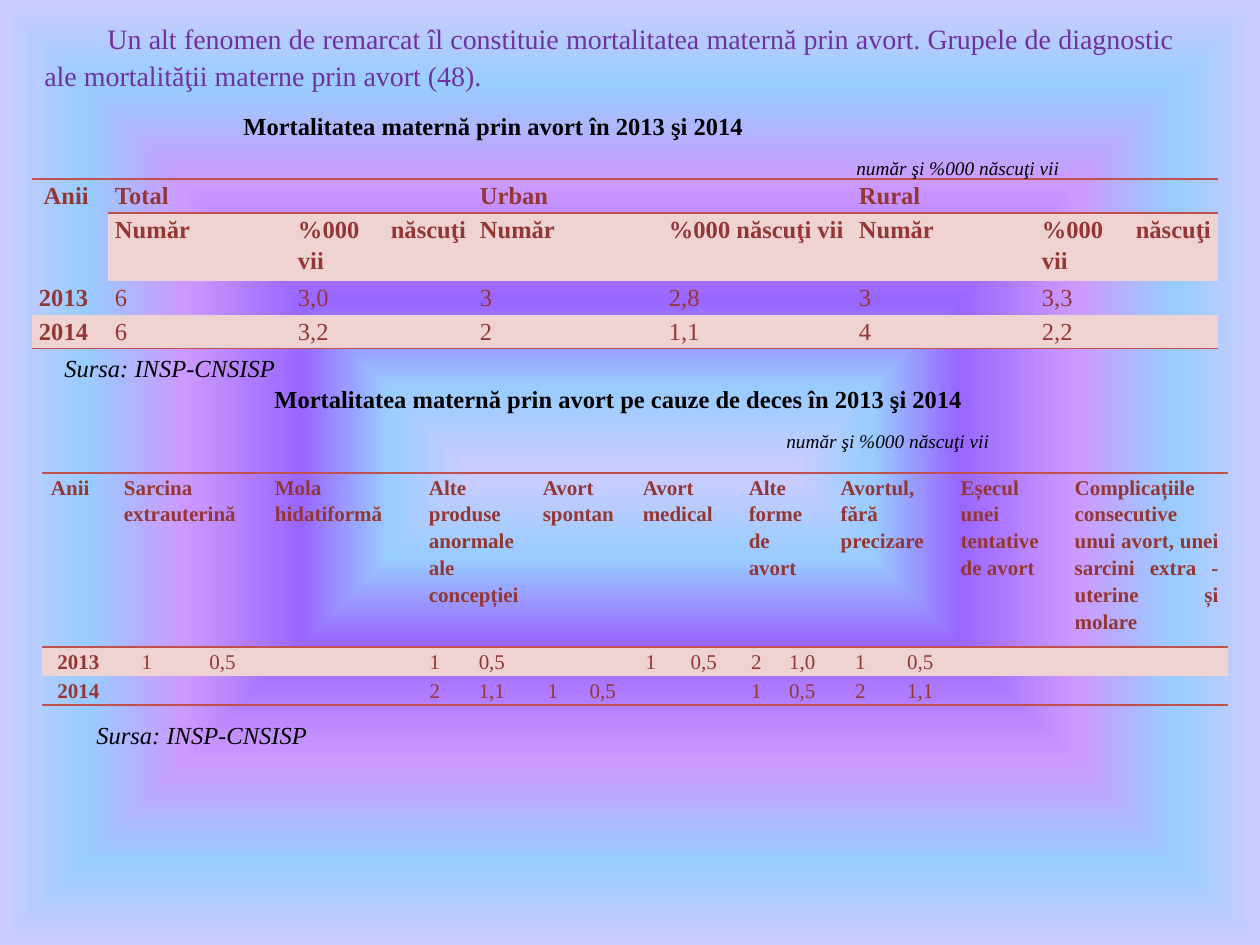
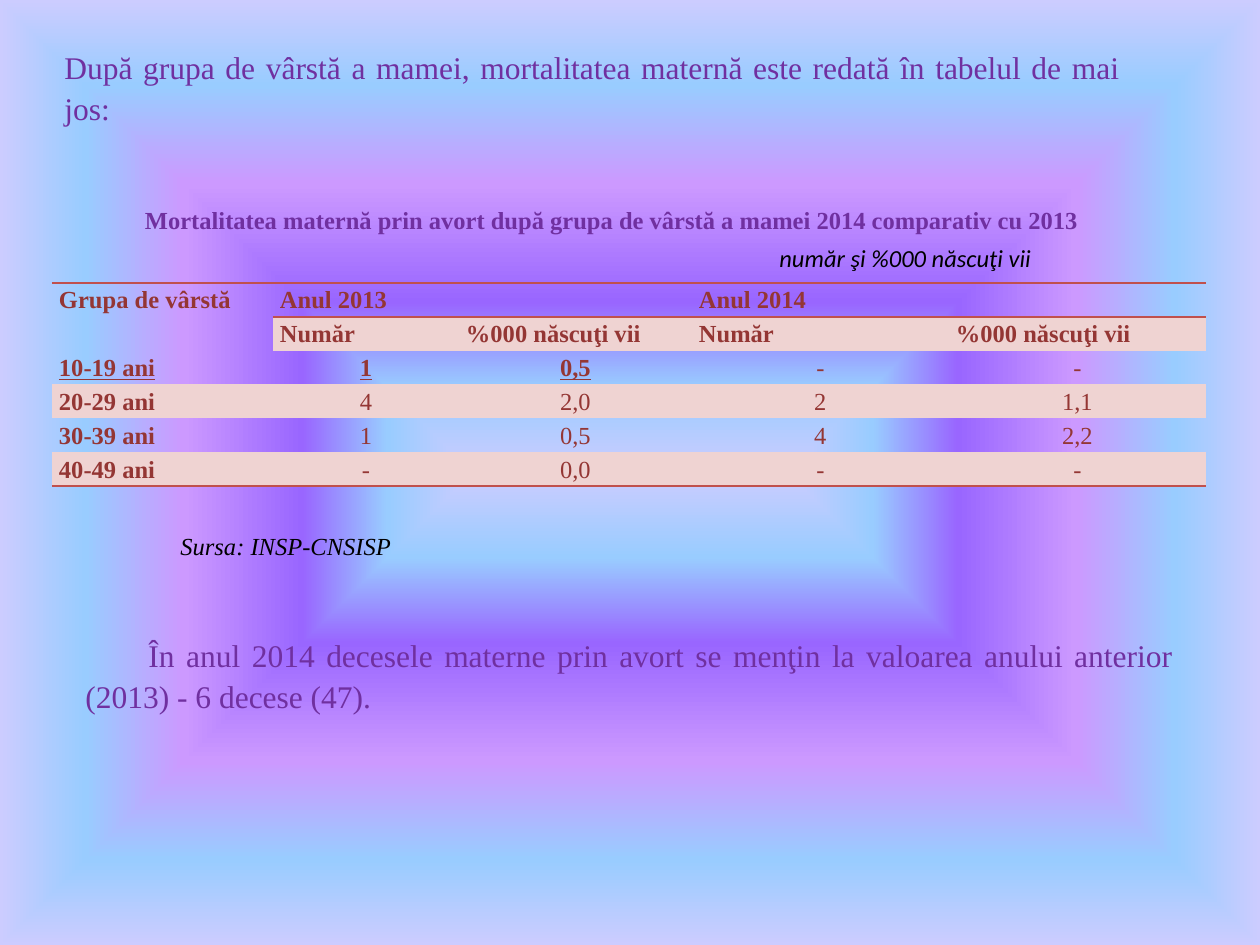
from dataclasses import dataclass

import pptx
import pptx.dml.color
import pptx.enum.text
import pptx.oxml
import pptx.oxml.ns
import pptx.slide
import pptx.table
import pptx.text.text
import pptx.util
from lxml import etree

SCALE = 914400 / 126  # EMU in one px
WIDE, HIGH = 1260, 945
COLORS = {
    "title": "7030A0",
    "ink": "000000",
    "table": "943634",
    "band": "EFD3D2",
    "line": "C0504D",
}
GLOW = [(0, "CCCCFF"), (18, "99CCFF"), (36, "9966FF"),
        (61, "CC99FF"), (82, "99CCFF"), (100, "CCCCFF")]
SERIF, SANS = "Times New Roman", "Calibri"
PLAIN_TABLE = "{2D5ABB26-0587-4C30-8999-92F81FD0307C}"
ALIGN = pptx.enum.text.PP_ALIGN
qn = pptx.oxml.ns.qn

LEAD = {"size": 18, "color": "title"}
HEAD = {"size": 14, "color": "ink", "bold": True}
NOTE = {"size": 11, "color": "ink", "italic": True}
SOURCE = {"size": 14, "color": "ink", "italic": True}


@dataclass
class Para:
    text: str
    style: dict
    align: ALIGN = ALIGN.LEFT
    left: int = 0
    first: int = 0
    before: int = 0
    lines: float = 1.0


@dataclass
class Box:
    x: int
    y: int
    w: int
    h: int
    paras: list[Para]
    top: int = 6


@dataclass
class Grid:
    """Table whose first row holds one label, then labels two columns wide."""
    x: int
    y: int
    cols: list[int]
    rows: list[int]
    labels: list[str]
    body: list[str]
    heads: int
    center: int
    size: int
    pad: int
    marked: tuple = ()


def px(size: float) -> int:
    return round(size * SCALE)


def style_font(font: pptx.text.text.Font, style: dict) -> None:
    looks = {"name": SERIF, **style}
    looks["size"] = pptx.util.Pt(looks["size"])
    color = looks.pop("color")
    for name, value in looks.items():
        setattr(font, name, value)
    font.color.rgb = pptx.dml.color.RGBColor.from_string(COLORS[color])


def fill_para(target: pptx.text.text._Paragraph, para: Para) -> None:
    target.alignment = para.align
    target.line_spacing = para.lines
    target.space_before = pptx.util.Pt(para.before)
    props = target._p.get_or_add_pPr()
    props.set("marL", str(px(para.left)))
    props.set("indent", str(px(para.first)))
    if para.text:
        run = target.add_run()
        run.text = para.text
        style_font(run.font, para.style)
    else:
        etree.SubElement(target._p, qn("a:endParaRPr"),
                         sz=str(para.style["size"] * 100))


def draw_box(slide: pptx.slide.Slide, box: Box) -> None:
    shape = slide.shapes.add_textbox(px(box.x), px(box.y), px(box.w), px(box.h))
    frame = shape.text_frame
    frame.word_wrap = True
    frame.margin_top = px(box.top)
    for index, para in enumerate(box.paras):
        target = frame.add_paragraph() if index else frame.paragraphs[0]
        fill_para(target, para)


def add_rule(cell: pptx.table._Cell, side: str) -> None:
    props = cell._tc.get_or_add_tcPr()
    line = etree.SubElement(props, qn(f"a:ln{side}"), w="12700")
    fill = etree.SubElement(line, qn("a:solidFill"))
    etree.SubElement(fill, qn("a:srgbClr"), val=COLORS["line"])


def merge_heads(table: pptx.table.Table, grid: Grid) -> None:
    table.cell(0, 0).merge(table.cell(grid.heads - 1, 0))
    for col in range(1, len(grid.cols), 2):
        table.cell(0, col).merge(table.cell(0, col + 1))


def cell_texts(grid: Grid) -> list[list[str]]:
    top = [grid.labels[0]]
    for label in grid.labels[1:]:
        top += [label, ""]
    return [top] + [line.split("|") for line in grid.body]


def draw_cell(cell: pptx.table._Cell, grid: Grid, row: int, col: int,
              text: str) -> None:
    tall = col == 0 and row < grid.heads and grid.heads > 1
    for name, size in {"left": grid.pad, "right": grid.pad,
                       "top": 0, "bottom": 0}.items():
        setattr(cell, f"margin_{name}", px(size))
    if row == 0:
        add_rule(cell, "T")
    if row == len(grid.rows) - 1 or (row == 0 and not tall):
        add_rule(cell, "B")
    if row % 2 and not tall:
        cell.fill.solid()
        cell.fill.fore_color.rgb = pptx.dml.color.RGBColor.from_string(
            COLORS["band"])
    else:
        cell.fill.background()
    mark = (row, col) in grid.marked
    style = {"size": grid.size, "color": "table", "underline": mark,
             "bold": mark or row < grid.heads or col == 0}
    mid = row >= grid.heads and col >= grid.center
    align = ALIGN.CENTER if mid else ALIGN.JUSTIFY
    fill_para(cell.text_frame.paragraphs[0],
              Para(text, style, align, lines=1.15))


def draw_grid(slide: pptx.slide.Slide, grid: Grid) -> None:
    frame = slide.shapes.add_table(
        len(grid.rows), len(grid.cols), px(grid.x), px(grid.y),
        px(sum(grid.cols)), px(sum(grid.rows)))
    table = frame.table
    table.first_row = table.horz_banding = False
    table._tbl.tblPr.find(qn("a:tableStyleId")).text = PLAIN_TABLE
    for col, wide in zip(table.columns, grid.cols):
        col.width = px(wide)
    for row, high in zip(table.rows, grid.rows):
        row.height = px(high)
    merge_heads(table, grid)
    for row, texts in enumerate(cell_texts(grid)):
        for col, text in enumerate(texts):
            draw_cell(table.cell(row, col), grid, row, col, text)


def paint_back(slide: pptx.slide.Slide) -> None:
    """Fill the slide with nested frames of colour around its centre."""
    slide.background.fill.gradient()
    grad = next(slide.element.iter(qn("a:gradFill")))
    for child in list(grad):
        grad.remove(child)
    stops = etree.SubElement(grad, qn("a:gsLst"))
    for place, color in GLOW:
        stop = etree.SubElement(stops, qn("a:gs"), pos=str(place * 1000))
        etree.SubElement(stop, qn("a:srgbClr"), val=color)
    shape = etree.SubElement(grad, qn("a:path"), path="shape")
    sides = dict.fromkeys("ltrb", "50000")
    etree.SubElement(shape, qn("a:fillToRect"), sides)


def lead_box(x: int, y: int, w: int, h: int, text: str,
             first: int = 0, size: int = 18) -> Box:
    para = Para(text, {**LEAD, "size": size}, ALIGN.JUSTIFY,
                first=first, lines=1.09)
    return Box(x, y, w, h, [para], top=3)


def source_box(x: int, y: int) -> Box:
    return Box(x, y, 240, 43, [Para("Sursa: INSP-CNSISP", SOURCE)])


UNIT = "număr şi %000 născuţi vii"
RATE = "Număr|%000 născuţi vii"

YEARS = Grid(
    32, 179, [76, 183, 182, 189, 190, 183, 183], [34, 67, 34, 34],
    [" Anii", "Total", "Urban", "Rural"],
    [f"|{RATE}|{RATE}|{RATE}",
     "2013|6|3,0|3|2,8|3|3,3",
     "2014|6|3,2|2|1,1|4|2,2"],
    heads=2, center=99, size=14, pad=7)

CAUSES = Grid(
    42, 473,
    [73, 64, 87, 71, 83, 30, 84, 38, 62, 34, 72, 33, 59, 57, 63, 64, 50, 81, 81],
    [174, 29, 29],
    ["Anii", "Sarcina extrauterină", "Mola hidatiformă",
     "Alte produse anormale ale concepției", "Avort spontan", "Avort medical",
     "Alte forme de avort", "Avortul, fără precizare",
     "Eșecul unei tentative de avort",
     "Complicațiile consecutive unui avort, unei sarcini extra - uterine și molare"],
    ["2013|1|0,5|||1|0,5|||1|0,5|2|1,0|1|0,5||||",
     "2014|||||2|1,1|1|0,5|||1|0,5|2|1,1||||"],
    heads=1, center=0, size=12, pad=9)

AGES = Grid(
    52, 283, [221, 186, 233, 257, 257], [31] * 6,
    ["Grupa de vârstă", "Anul 2013", "Anul 2014"],
    [f"|{RATE}|{RATE}",
     "10-19 ani|1|0,5|-|-",
     "20-29 ani|4|2,0|2|1,1",
     "30-39 ani|1|0,5|4|2,2",
     "40-49 ani|-|0,0|-|-"],
    heads=2, center=1, size=14, pad=7, marked=((2, 0), (2, 1), (2, 2)))

SLIDES = [
    [lead_box(32, 16, 1155, 111,
              "Un alt fenomen de remarcat îl constituie mortalitatea maternă "
              "prin avort. Grupele de diagnostic ale mortalităţii materne prin "
              "avort (48).", first=63, size=16),
     YEARS,
     Box(231, 105, 945, 81, [
         Para("Mortalitatea maternă prin avort în 2013 şi 2014", HEAD),
         Para(UNIT, NOTE, left=613, before=9)]),
     source_box(52, 347),
     CAUSES,
     Box(262, 378, 1081, 81, [
         Para("Mortalitatea maternă prin avort pe cauze de deces în 2013 şi 2014",
              HEAD, ALIGN.JUSTIFY),
         Para(UNIT, NOTE, left=512, before=9)]),
     source_box(84, 714)],
    [AGES,
     source_box(168, 525),
     lead_box(73, 630, 1113, 89,
              "În anul 2014 decesele materne prin avort se menţin la valoarea "
              "anului anterior (2013) - 6 decese (47).", first=63),
     lead_box(52, 42, 1081, 89,
              "După grupa de vârstă a mamei, mortalitatea maternă este redată "
              "în tabelul de mai jos:"),
     Box(84, 199, 1050, 81, [
         Para(" Mortalitatea maternă prin avort după grupa de vârstă a mamei "
              "2014 comparativ cu 2013", {**HEAD, "color": "title"}, ALIGN.CENTER),
         Para(UNIT, {**NOTE, "size": 14, "name": SANS}, left=683, before=5)])],
]


def main() -> None:
    deck = pptx.Presentation()
    deck.slide_width, deck.slide_height = px(WIDE), px(HIGH)
    for items in SLIDES:
        slide = deck.slides.add_slide(deck.slide_layouts[6])
        paint_back(slide)
        for item in items:
            draw = draw_grid if isinstance(item, Grid) else draw_box
            draw(slide, item)
    deck.save("out.pptx")


if __name__ == "__main__":
    main()
